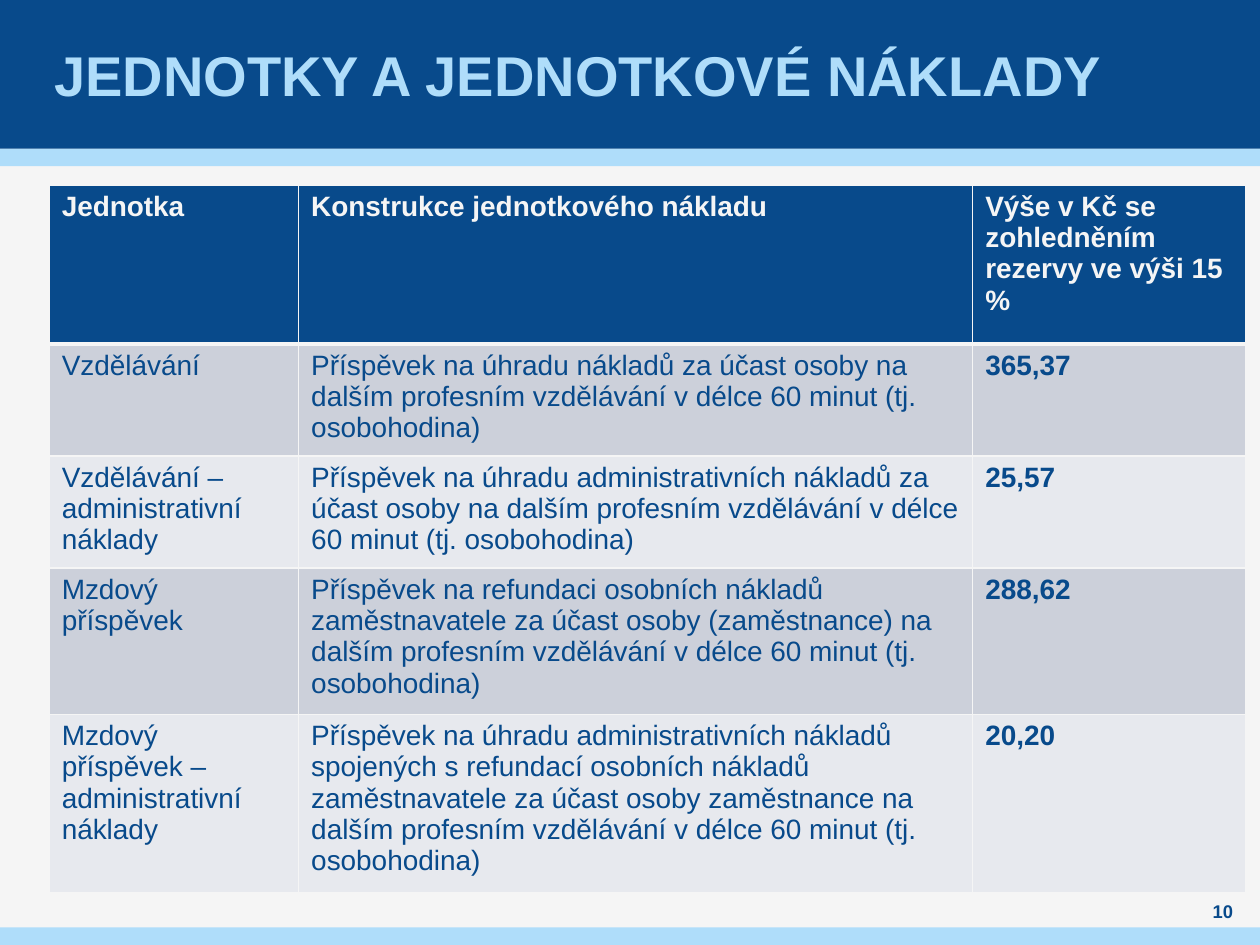
from typing import NamedTuple

from lxml.etree import SubElement
from pptx import Presentation
from pptx.dml.color import RGBColor
from pptx.enum.shapes import MSO_SHAPE
from pptx.enum.text import MSO_ANCHOR as Anchor, PP_ALIGN as Align
from pptx.oxml.ns import qn
from pptx.util import Inches, Pt

NAVY, SKY, PAPER = "084A8B", "AFDDFA", "F5F5F5"
ROW_FILLS = ["CCD0DA", "E7E9EE"]


class Band(NamedTuple):
    top: float
    height: float
    color: str


class Unit(NamedTuple):
    name: str
    construction: str
    amount: str


BANDS = [Band(1.18, 0.14, SKY), Band(0, 1.18, NAVY), Band(7.36, 0.14, SKY)]
HEADER = Unit("Jednotka", "Konstrukce jednotkového nákladu",
              "Výše v Kč se zohledněním rezervy ve výši 15 %")
UNITS = [
    Unit("Vzdělávání",
         "Příspěvek na úhradu nákladů za účast osoby na dalším profesním "
         "vzdělávání v délce 60 minut (tj. osobohodina)", "365,37"),
    Unit("Vzdělávání – administrativní náklady",
         "Příspěvek na úhradu administrativních nákladů za účast osoby na "
         "dalším profesním vzdělávání v délce 60 minut (tj. osobohodina)", "25,57"),
    Unit("Mzdový příspěvek",
         "Příspěvek na refundaci osobních nákladů zaměstnavatele za účast osoby "
         "(zaměstnance) na dalším profesním vzdělávání v délce 60 minut "
         "(tj. osobohodina)", "288,62"),
    Unit("Mzdový příspěvek – administrativní náklady",
         "Příspěvek na úhradu administrativních nákladů spojených s refundací "
         "osobních nákladů zaměstnavatele za účast osoby zaměstnance na dalším "
         "profesním vzdělávání v délce 60 minut (tj. osobohodina)", "20,20"),
]
COLUMN_WIDTHS = [1.98, 5.35, 2.17]
ROW_HEIGHTS = [1.26, 0.89, 0.89, 1.16, 1.42]


def rgb(color: str) -> RGBColor:
    return RGBColor.from_string(color)


def write(frame, text: str, size: float, color: str, bold: bool, align=Align.LEFT) -> None:
    para = frame.paragraphs[0]
    para.alignment = align
    span = para.add_run()
    span.text = text
    for name, value in {"name": "Arial", "size": Pt(size), "bold": bold}.items():
        setattr(span.font, name, value)
    span.font.color.rgb = rgb(color)


def set_frame(frame, side_margin: float) -> None:
    settings = {"word_wrap": True, "vertical_anchor": Anchor.MIDDLE,
                "margin_left": Inches(side_margin), "margin_right": Inches(side_margin),
                "margin_top": 0, "margin_bottom": 0}
    for name, value in settings.items():
        setattr(frame, name, value)


def place(box, left: float, top: float, width: float, height: float) -> None:
    for name, value in zip(("left", "top", "width", "height"), (left, top, width, height)):
        setattr(box, name, Inches(value))


def draw_band(page, band: Band) -> None:
    box = page.shapes.add_shape(MSO_SHAPE.RECTANGLE, 0, Inches(band.top),
                                Inches(10), Inches(band.height))
    box.shadow.inherit = False
    box.fill.solid()
    box.fill.fore_color.rgb = rgb(band.color)
    box.line.fill.background()
    page.shapes.title.element.addprevious(box.element)  # keep bands behind the title


def set_borders(cell, top: float, bottom: float) -> None:
    properties = cell._tc.get_or_add_tcPr()
    widths = {"a:lnL": 1, "a:lnR": 1, "a:lnT": top, "a:lnB": bottom}
    for position, (tag, width) in enumerate(widths.items()):
        line = SubElement(properties, qn(tag), w=str(Pt(width)))
        SubElement(SubElement(line, qn("a:solidFill")), qn("a:srgbClr"), val=PAPER)
        properties.insert(position, line)  # borders come before the fill


def draw_table(page) -> None:
    rows = [HEADER, *UNITS]
    table = page.shapes.add_table(
        len(rows), len(COLUMN_WIDTHS), Inches(0.39), Inches(1.47),
        Inches(sum(COLUMN_WIDTHS)), Inches(sum(ROW_HEIGHTS))).table
    for column, width in zip(table.columns, COLUMN_WIDTHS):
        column.width = Inches(width)
    for index, (unit, height) in enumerate(zip(rows, ROW_HEIGHTS)):
        table.rows[index].height = Inches(height)
        header = index == 0
        for column, text in enumerate(unit):
            cell = table.cell(index, column)
            cell.fill.solid()
            cell.fill.fore_color.rgb = rgb(NAVY if header else ROW_FILLS[(index - 1) % 2])
            write(cell.text_frame, text, 16, PAPER if header else NAVY,
                  header or column == 2)
            set_borders(cell, top=3 if index == 1 else 1, bottom=3 if header else 1)


def main() -> None:
    deck = Presentation()
    deck.slide_width, deck.slide_height = Inches(10), Inches(7.5)
    page = deck.slides.add_slide(deck.slide_layouts[5])
    page.background.fill.solid()
    page.background.fill.fore_color.rgb = rgb(PAPER)

    # Bands and title
    for band in BANDS:
        draw_band(page, band)
    title = page.shapes.title
    place(title, 0.39, 0, 9.21, 1.18)
    set_frame(title.text_frame, 0.04)
    write(title.text_frame, "JEDNOTKY A JEDNOTKOVÉ NÁKLADY", 32, SKY, True)

    # Unit costs
    draw_table(page)

    # Page number
    number = page.shapes.add_textbox(0, 0, 0, 0)
    place(number, 9.45, 7.13, 0.51, 0.2)
    set_frame(number.text_frame, 0)
    write(number.text_frame, "10", 10.5, NAVY, True, Align.CENTER)

    deck.save("out.pptx")


if __name__ == "__main__":
    main()
